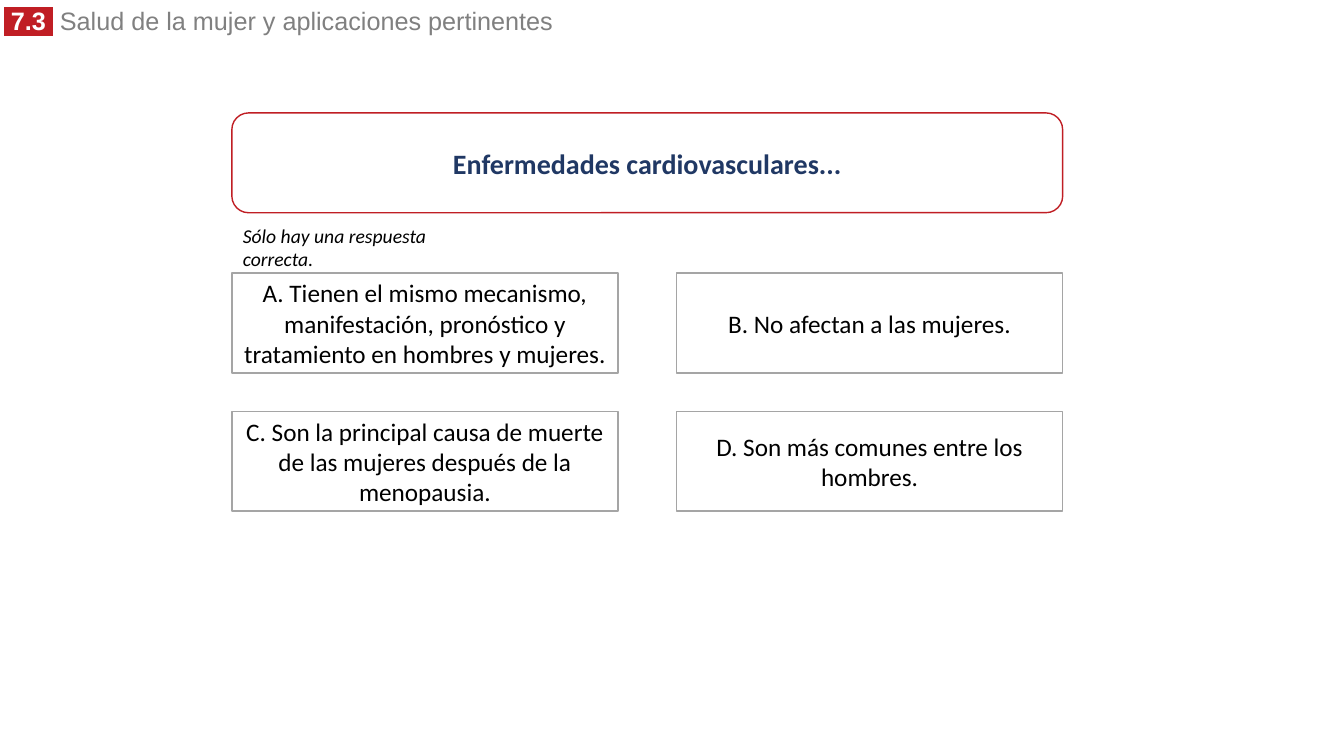
from lxml.etree import SubElement
from pptx import Presentation
from pptx.dml.color import RGBColor as RGB
from pptx.enum.shapes import MSO_SHAPE as SHAPE
from pptx.enum.text import MSO_ANCHOR as ANCHOR, MSO_AUTO_SIZE as FIT, PP_ALIGN as ALIGN
from pptx.oxml.ns import qn
from pptx.util import Inches, Pt

COLORS = {"red": "C01E24", "navy": "203864", "gray": "808080",
          "border": "A5A5A5", "white": "FFFFFF", "black": "000000"}
ANSWERS = [
    "A. Tienen el mismo mecanismo, manifestación, pronóstico y tratamiento en hombres y mujeres.",
    "B. No afectan a las mujeres.",
    "C. Son la principal causa de muerte de las mujeres después de la menopausia.",
    "D. Son más comunes entre los hombres.",
]
CARD_H = 0.99


def color(name):
    return RGB.from_string(COLORS[name])


def add_run(p, text, size, ink, font="Calibri", bold=False, italic=False, highlight=None):
    r = p.add_run()
    r.text = text
    f = r.font
    f.size, f.name, f.bold, f.italic = Pt(size), font, bold, italic
    f.color.rgb = color(ink)
    if highlight:
        rpr = r._r.get_or_add_rPr()
        mark = SubElement(rpr, qn("a:highlight"))
        SubElement(mark, qn("a:srgbClr"), val=COLORS[highlight])
        rpr.find(qn("a:solidFill")).addnext(mark)


def add_text(s, box):
    tf = s.shapes.add_textbox(*map(Inches, box)).text_frame
    tf.word_wrap = True
    tf.auto_size = FIT.SHAPE_TO_FIT_TEXT
    return tf.paragraphs[0]


def add_card(s, box, kind, border, text, size, ink, bold=False):
    sp = s.shapes.add_shape(kind, *map(Inches, box))
    sp.shadow.inherit = False
    sp.fill.solid()
    sp.fill.fore_color.rgb = color("white")
    sp.line.color.rgb = color(border)
    sp.line.width = Pt(1)
    tf = sp.text_frame
    tf.word_wrap = True
    tf.vertical_anchor = ANCHOR.MIDDLE
    p = tf.paragraphs[0]
    p.alignment = ALIGN.CENTER
    add_run(p, text, size, ink, bold=bold)


# Section number and title
def add_header(s, box):
    p = add_text(s, box)
    p.line_spacing = 0.8
    add_run(p, " 7.3 ", 18, "white", "Arial", bold=True, highlight="red")
    add_run(p, " Salud de la mujer y aplicaciones pertinentes", 18, "gray", "Arial")


# Question with its hint below
def add_question(s, left, top, width):
    add_card(s, (left, top, width, CARD_H), SHAPE.ROUNDED_RECTANGLE, "red",
             "Enfermedades cardiovasculares...", 20, "navy", bold=True)
    p = add_text(s, (left + 0.01, top + 1.05, 2.36, 0.34))
    add_run(p, "Sólo hay una respuesta correcta.", 14, "black", italic=True)


# Answers in a grid of two columns
def add_answers(s, left, top, width, gap_x=0.58, gap_y=0.38):
    card_w = (width - gap_x) / 2
    for i, answer in enumerate(ANSWERS):
        row, col = divmod(i, 2)
        box = (left + col * (card_w + gap_x), top + row * (CARD_H + gap_y), card_w, CARD_H)
        add_card(s, box, SHAPE.RECTANGLE, "border", answer, 18, "black")


def main():
    prs = Presentation()
    prs.slide_width, prs.slide_height = Inches(13.33), Inches(7.5)
    s = prs.slides.add_slide(prs.slide_layouts[6])
    add_header(s, (-0.06, 0.06, 6.53, 0.34))
    add_question(s, 2.3, 1.12, 8.24)
    add_answers(s, 2.3, 2.71, 8.24)
    prs.save("out.pptx")


if __name__ == "__main__":
    main()
